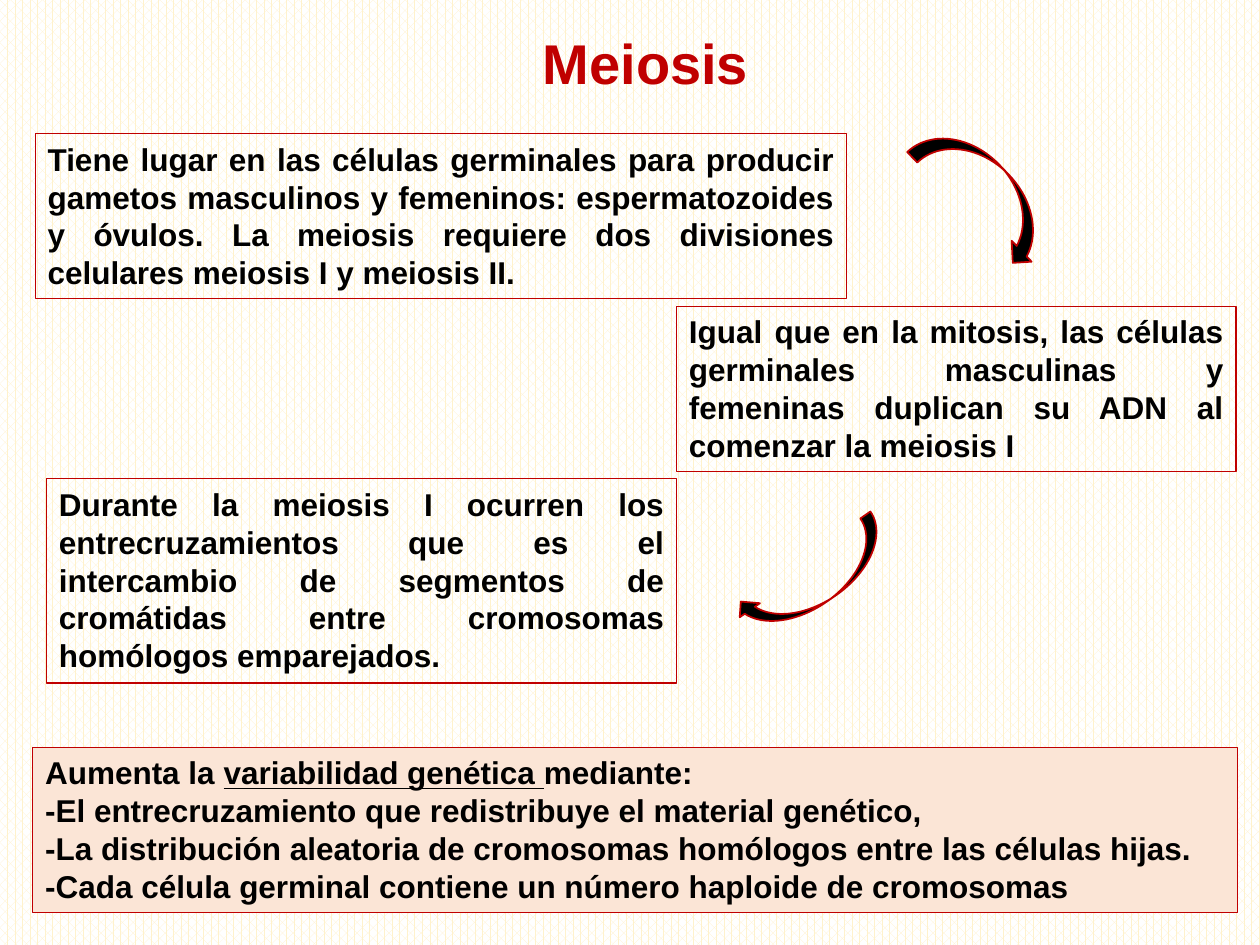
import pptx
import pptx.util
import pptx.dml.color
import pptx.enum.dml
import pptx.enum.shapes
import pptx.enum.text

RGB = pptx.dml.color.RGBColor.from_string
Kind = pptx.enum.shapes.MSO_SHAPE
Align = pptx.enum.text.PP_ALIGN
Fit = pptx.enum.text.MSO_AUTO_SIZE
theme = {
    "font": "Arial", "red": RGB("C00000"), "ink": RGB("000000"),
    "peach": RGB("FBE5D6"), "cream": RGB("FFF2CC"), "white": RGB("FFFFFF"),
    "title": 32, "body": 18, "edge": 0.75, "rim": 1,
}

deck = pptx.Presentation()
deck.slide_width = pptx.util.Inches(10)
deck.slide_height = pptx.util.Inches(7.5)
slide = deck.slides.add_slide(deck.slide_layouts[6])
col = deck.slide_width / 100
row = deck.slide_height / 75

back = slide.background.fill
back.patterned()
back.pattern = pptx.enum.dml.MSO_PATTERN.PERCENT_60
back.fore_color.rgb = theme["cream"]
back.back_color.rgb = theme["white"]


def draw(kind, spot, fill, width):
    left, top, wide, high = spot
    shape = slide.shapes.add_shape(
        kind, round(left * col), round(top * row), round(wide * col), round(high * row))
    shape.shadow.inherit = False
    if fill is None:
        shape.fill.background()
    else:
        shape.fill.solid()
        shape.fill.fore_color.rgb = fill
    shape.line.color.rgb = theme["red"]
    shape.line.width = pptx.util.Pt(width)
    return shape


def style(frame, size, color, align):
    frame.auto_size = Fit.SHAPE_TO_FIT_TEXT
    frame.vertical_anchor = pptx.enum.text.MSO_ANCHOR.TOP
    for para in frame.paragraphs:
        para.alignment = align
        for run in para.runs:
            run.font.name = theme["font"]
            run.font.size = pptx.util.Pt(size)
            run.font.bold = True
            run.font.color.rgb = color


title = slide.shapes.add_textbox(
    round(42.1 * col), round(1.8 * row), round(18.4 * col), round(6.4 * row))
title.text_frame.text = "Meiosis"
title.text_frame.word_wrap = False
style(title.text_frame, theme["title"], theme["red"], Align.LEFT)

notes = [
    ((2.8, 10.6, 64.4, 13.1),
     "Tiene lugar en las células germinales para producir gametos masculinos y femeninos: "
     "espermatozoides y óvulos. La meiosis requiere dos divisiones celulares meiosis I y meiosis II."),
    ((53.7, 24.3, 44.4, 13.1),
     "Igual que en la mitosis, las células germinales masculinas y femeninas duplican su ADN "
     "al comenzar la meiosis I"),
    ((3.7, 38, 50, 16.2),
     "Durante la meiosis I ocurren los entrecruzamientos que es el intercambio de segmentos "
     "de cromátidas entre cromosomas homólogos emparejados. "),
]
for spot, text in notes:
    box = draw(Kind.RECTANGLE, spot, None, theme["edge"])
    box.text_frame.text = text
    style(box.text_frame, theme["body"], theme["ink"], Align.JUSTIFY)

result = draw(Kind.RECTANGLE, (2.6, 59.3, 95.6, 13.1), theme["peach"], theme["edge"])
frame = result.text_frame
frame.text = "\n".join([
    "Aumenta la ",
    "-El entrecruzamiento que redistribuye el material genético,",
    "-La distribución aleatoria de cromosomas homólogos entre las células hijas.",
    "-Cada célula germinal contiene un número haploide de cromosomas",
])
lead = frame.paragraphs[0]
for text, under in [("variabilidad genética ", True), ("mediante:", False)]:
    run = lead.add_run()
    run.text = text
    run.font.underline = under
style(frame, theme["body"], theme["ink"], Align.LEFT)

arrows = [
    (Kind.CURVED_DOWN_ARROW, (71.6, 13, 13.3, 4.6), 46.4, False),
    (Kind.CURVED_UP_ARROW, (57.9, 44.1, 13.5, 3.9), 145.2, True),
]
for kind, spot, turn, flip in arrows:
    arrow = draw(kind, spot, theme["ink"], theme["rim"])
    arrow.rotation = turn
    if flip:
        arrow._element.spPr.xfrm.set("flipV", "1")

deck.save("out.pptx")
